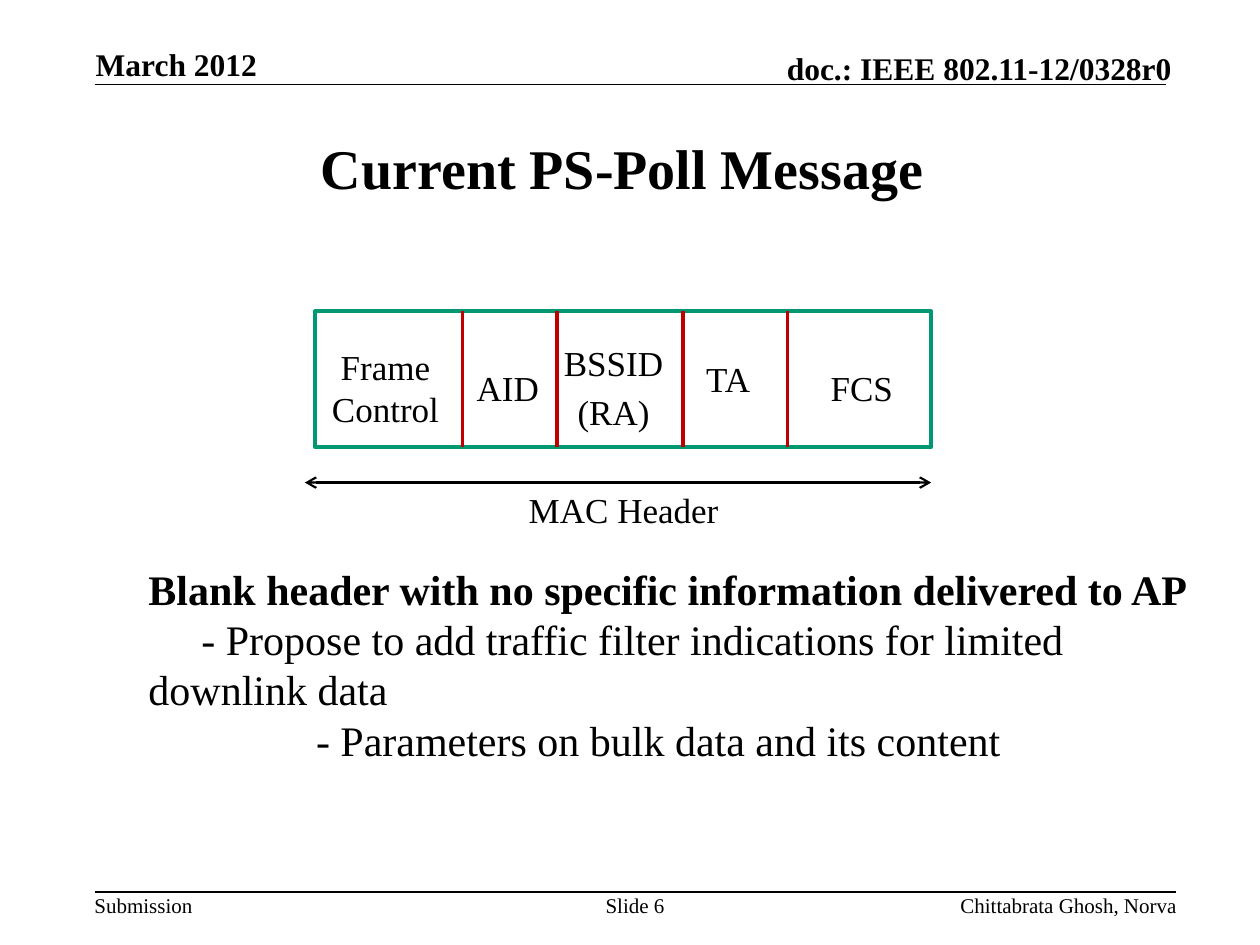
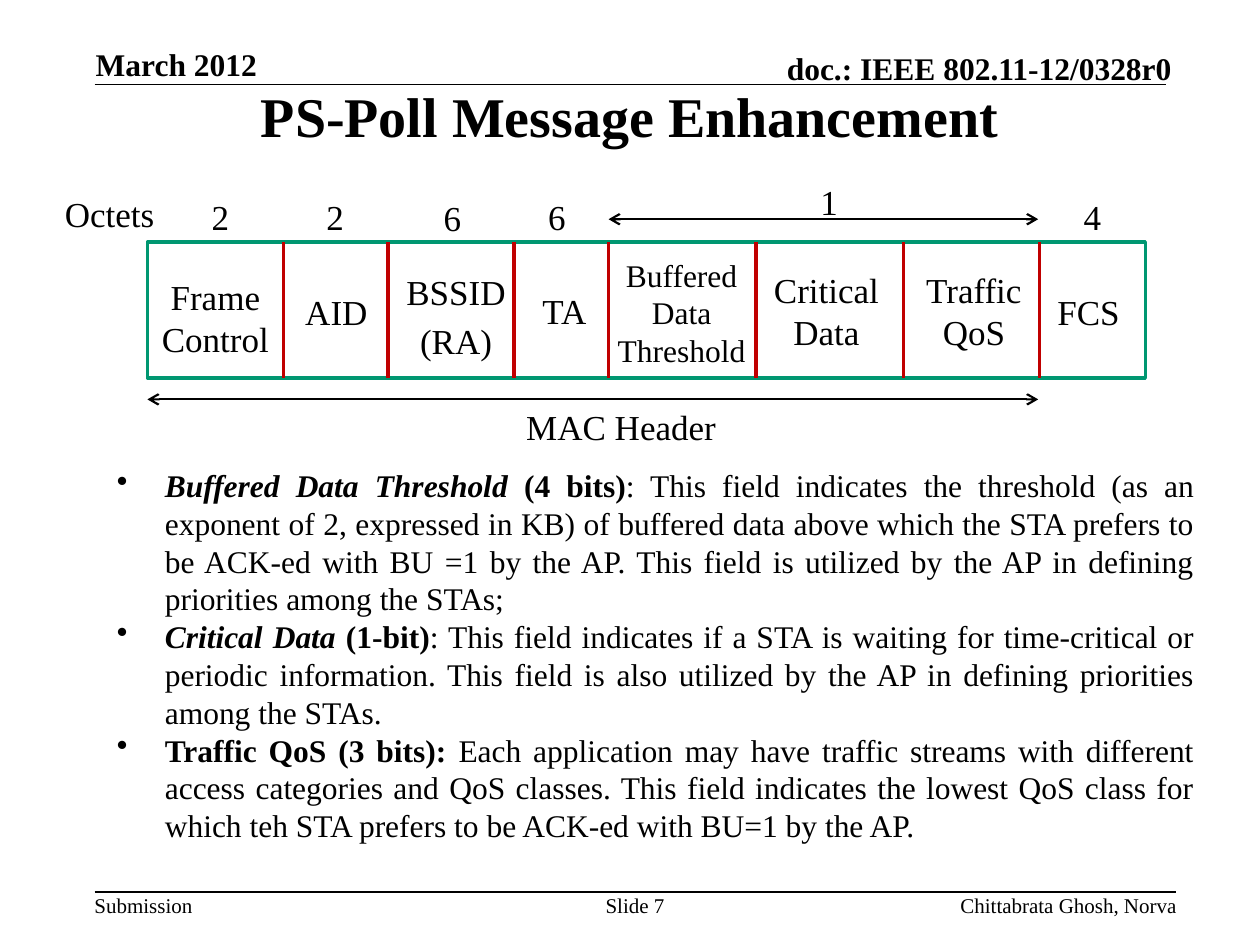
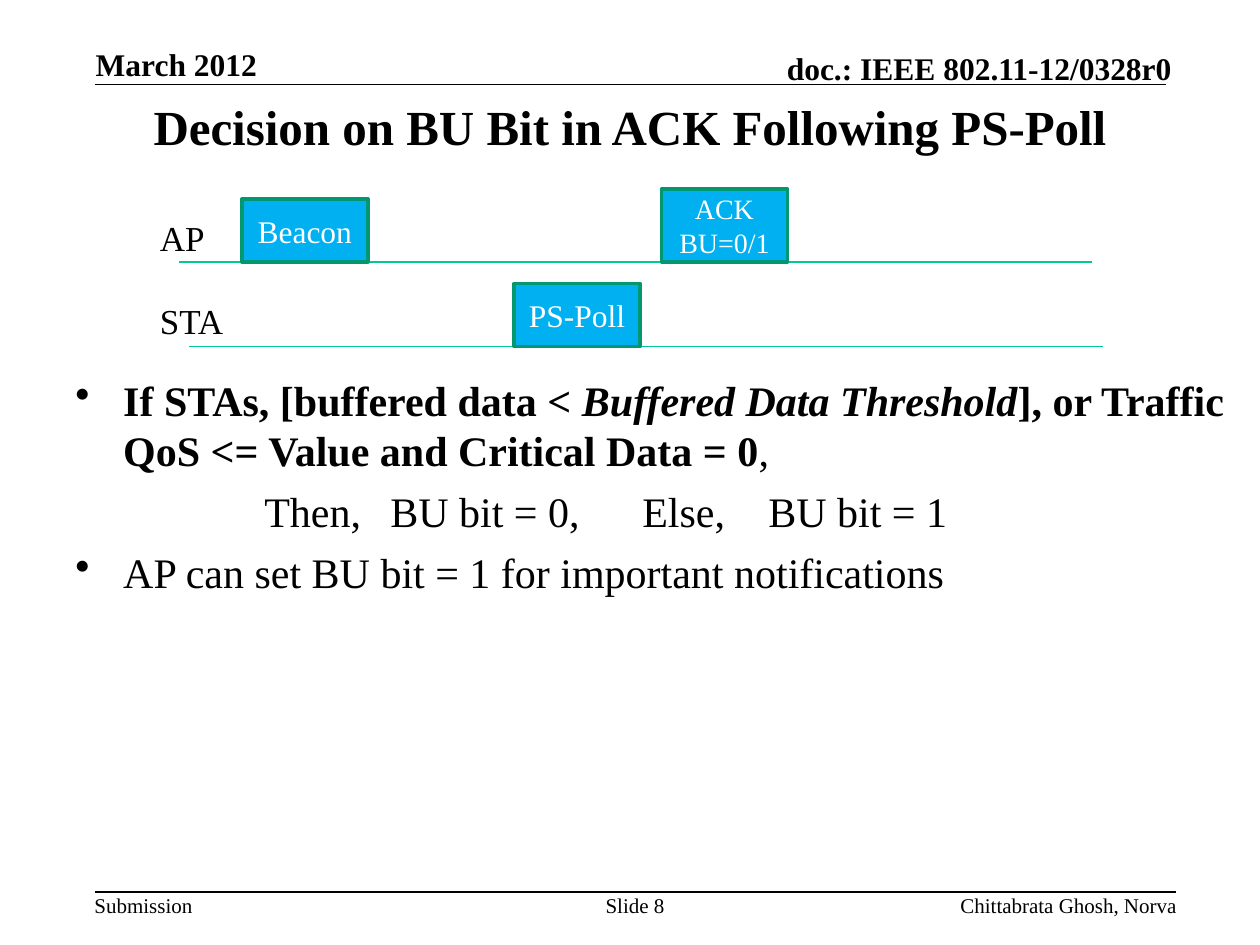
import pptx
import pptx.dml.color
import pptx.enum.shapes
import pptx.enum.text
import pptx.oxml
import pptx.oxml.ns
import pptx.util
from pptx.util import Inches

FONT = "Times New Roman"
COLORS = {
    "ink": "000000",
    "paper": "FFFFFF",
    "frame": "009771",
    "divider": "C00000",
    "timeline": "00C896",
    "message": "00B0F0",
}
RGB = {name: pptx.dml.color.RGBColor.from_string(code) for name, code in COLORS.items()}
LEFT, CENTER, RIGHT, JUSTIFY = (
    pptx.enum.text.PP_ALIGN.LEFT,
    pptx.enum.text.PP_ALIGN.CENTER,
    pptx.enum.text.PP_ALIGN.RIGHT,
    pptx.enum.text.PP_ALIGN.JUSTIFY,
)
TOP, MIDDLE, BOTTOM = (
    pptx.enum.text.MSO_ANCHOR.TOP,
    pptx.enum.text.MSO_ANCHOR.MIDDLE,
    pptx.enum.text.MSO_ANCHOR.BOTTOM,
)
RECTANGLE = pptx.enum.shapes.MSO_SHAPE.RECTANGLE


def write(shape, paragraphs, size, bold=False, align=LEFT, anchor=TOP, color="ink",
          inset=(0.1, 0.05), space=0):
    """Fill a shape with paragraphs.

    Each is a string or a dict with spans [(text, style letters b and i)] and
    optionally bullet, indent (first line, inches) and tabs (inches).
    """
    frame = shape.text_frame
    frame.word_wrap = True
    frame.vertical_anchor = anchor
    frame.margin_left = frame.margin_right = Inches(inset[0])
    frame.margin_top = frame.margin_bottom = Inches(inset[1])
    for index, item in enumerate(paragraphs):
        if isinstance(item, str):
            item = {"spans": [(item, "b" if bold else "")]}
        para = frame.paragraphs[0] if index == 0 else frame.add_paragraph()
        para.alignment = align
        if index and space:
            para.space_before = pptx.util.Pt(space)
        properties = para._p.get_or_add_pPr()
        if item.get("bullet"):
            properties.set("marL", str(Inches(0.38)))
            properties.set("indent", str(Inches(-0.38)))
            bullet = pptx.oxml.parse_xml(
                f'<a:buChar {pptx.oxml.ns.nsdecls("a")} char="•"/>')
            properties.append(bullet)
        elif "indent" in item:
            properties.set("marL", "0")
            properties.set("indent", str(Inches(item["indent"])))
        if "tabs" in item:
            stops = "".join(f'<a:tab pos="{Inches(stop)}" algn="l"/>' for stop in item["tabs"])
            properties.append(pptx.oxml.parse_xml(
                f'<a:tabLst {pptx.oxml.ns.nsdecls("a")}>{stops}</a:tabLst>'))
        para.font.name = FONT
        para.font.size = pptx.util.Pt(size)
        para.font.color.rgb = RGB[color]
        styles = {style for _, style in item["spans"]}
        if len(styles) == 1:
            para.font.bold = "b" in item["spans"][0][1]
        for text, style in item["spans"]:
            span = para.add_run()
            span.text = text
            if len(styles) > 1:
                span.font.bold = "b" in style
                span.font.italic = "i" in style


def draw_line(page, left, top, right, bottom, color, width, arrows=False):
    line = page.shapes.add_connector(
        pptx.enum.shapes.MSO_CONNECTOR.STRAIGHT,
        Inches(left), Inches(top), Inches(right), Inches(bottom))
    line.line.color.rgb = RGB[color]
    line.line.width = pptx.util.Pt(width)
    properties = line._element.spPr
    if arrows:
        for end in ("headEnd", "tailEnd"):
            properties.get_or_add_ln().append(pptx.oxml.parse_xml(
                f'<a:{end} {pptx.oxml.ns.nsdecls("a")} type="arrow"/>'))
    properties.append(pptx.oxml.parse_xml(f'<a:effectLst {pptx.oxml.ns.nsdecls("a")}/>'))


deck = pptx.Presentation()
deck.slide_width = Inches(10)
deck.slide_height = Inches(7.5)

# Title, left, top, size
titles = [
    ("Current PS-Poll Message", 0.69, 0.75, 32),
    ("PS-Poll Message Enhancement", 0.75, 0.33, 32),
    ("Decision on BU Bit in ACK Following PS-Poll", 0.75, 0.42, 28),
]
pages = []
for number, (title, left, top, size) in enumerate(titles, start=6):
    page = deck.slides.add_slide(deck.slide_layouts[6])
    pages.append(page)
    for rule_top, rule_right in ((0.67, 9.25), (7.08, 9.33)):
        draw_line(page, 0.75, rule_top, rule_right, rule_top, "ink", 1)
    bands = [
        ("March 2012", 0.76, 0.36, 2.05, 0.3, 18, LEFT, BOTTOM),
        ("doc.: IEEE 802.11-12/0328r0", 5.47, 0.39, 3.83, 0.3, 18, RIGHT, BOTTOM),
        ("Submission", 0.75, 7.08, 0.9, 0.2, 12, LEFT, TOP),
        (f"Slide {number}", 4.75, 7.08, 0.58, 0.2, 12, CENTER, TOP),
        ("Chittabrata Ghosh, Norva", 5.86, 7.08, 3.48, 0.2, 12, RIGHT, TOP),
    ]
    for text, x, y, width, height, band_size, align, anchor in bands:
        box = page.shapes.add_textbox(Inches(x), Inches(y), Inches(width), Inches(height))
        write(box, [text], band_size, bold=band_size == 18, align=align, anchor=anchor,
              inset=(0, 0))
    box = page.shapes.add_textbox(Inches(left), Inches(top), Inches(8.5), Inches(1.16))
    write(box, [title], size, bold=True, align=CENTER, anchor=MIDDLE)

current, enhanced, decision = pages

# Message frames: edges of the fields, then labels as (lines, centre, top, size, space)
message_frames = [
    (current, 2.47, [2.5, 3.67, 4.42, 5.42, 6.25, 7.39], [
        (["Frame", "Control"], 3.06, 2.69, 20, 0),
        (["AID"], 4.03, 2.86, 20, 0),
        (["BSSID", "(RA)"], 4.87, 2.66, 20, 4),
        (["TA"], 5.78, 2.79, 20, 0),
        (["FCS"], 6.84, 2.86, 20, 0),
        (["MAC Header"], 4.95, 3.83, 20, 0),
    ]),
    (enhanced, 1.92, [1.17, 2.25, 3.08, 4.08, 4.83, 6, 7.17, 8.25, 9.09], [
        (["Frame", "Control"], 1.71, 2.14, 20, 0),
        (["AID"], 2.67, 2.26, 20, 0),
        (["BSSID", "(RA)"], 3.62, 2.1, 20, 4),
        (["TA"], 4.48, 2.25, 20, 0),
        (["Buffered", "Data", "Threshold"], 5.41, 1.98, 18, 0),
        (["Critical", "Data"], 6.56, 2.08, 20, 0),
        (["Traffic", "QoS"], 7.73, 2.08, 20, 0),
        (["FCS"], 8.64, 2.26, 20, 0),
        (["Octets"], 0.87, 1.48, 20, 0),
        (["2"], 1.75, 1.5, 20, 0),
        (["2"], 2.66, 1.5, 20, 0),
        (["6"], 3.59, 1.51, 20, 0),
        (["6"], 4.42, 1.5, 20, 0),
        (["1"], 6.58, 1.38, 20, 0),
        (["4"], 8.67, 1.5, 20, 0),
        (["MAC Header"], 4.93, 3.17, 20, 0),
    ]),
]
FRAME_HEIGHT = 1.08
LABEL_WIDTH = 1.8
for page, top, edges, labels in message_frames:
    outline = page.shapes.add_shape(
        RECTANGLE, Inches(edges[0]), Inches(top),
        Inches(edges[-1] - edges[0]), Inches(FRAME_HEIGHT))
    outline.shadow.inherit = False
    outline.fill.solid()
    outline.fill.fore_color.rgb = RGB["paper"]
    outline.line.color.rgb = RGB["frame"]
    outline.line.width = pptx.util.Pt(2)
    for edge in edges[1:-1]:
        draw_line(page, edge, top, edge, top + FRAME_HEIGHT, "divider", 2)
    for lines, center, label_top, size, space in labels:
        box = page.shapes.add_textbox(
            Inches(center - LABEL_WIDTH / 2), Inches(label_top),
            Inches(LABEL_WIDTH), Inches(0.1 + 0.33 * len(lines)))
        write(box, lines, size, align=CENTER, space=space)

for page, left, right, height in (
    (current, 2.42, 7.39, 3.83),
    (enhanced, 4.83, 8.24, 1.74),
    (enhanced, 1.17, 8.24, 3.17),
):
    draw_line(page, left, height, right, height, "ink", 1.25, arrows=True)

# Timelines of the access point and the station
for name, name_top, left, top in (("AP", 1.67, 1.42, 2.08), ("STA", 2.33, 1.5, 2.75)):
    draw_line(decision, left, top, left + 7.25, top, "timeline", 0.75)
    box = decision.shapes.add_textbox(Inches(1.17), Inches(name_top), Inches(1), Inches(0.44))
    write(box, [name], 20)

for lines, left, top, height, size in (
    (["Beacon"], 1.92, 1.58, 0.5, 18),
    (["PS-Poll"], 4.08, 2.25, 0.5, 18),
    (["ACK", "BU=0/1"], 5.25, 1.5, 0.58, 16),
):
    message = decision.shapes.add_shape(
        RECTANGLE, Inches(left), Inches(top), Inches(1), Inches(height))
    message.shadow.inherit = False
    message.fill.solid()
    message.fill.fore_color.rgb = RGB["message"]
    message.line.color.rgb = RGB["frame"]
    message.line.width = pptx.util.Pt(2)
    write(message, lines, size, align=CENTER, anchor=MIDDLE, color="paper")

# Body texts
body = current.shapes.add_textbox(Inches(1.08), Inches(4.42), Inches(8.75), Inches(2.12))
write(body, [
    {"spans": [("Blank header with no specific information delivered to AP", "b")]},
    {"indent": 0.42, "spans": [
        ("- Propose to add traffic filter indications for limited downlink data", "")]},
    {"indent": 1.33, "spans": [("- Parameters on bulk data and its content", "")]},
], 24)

body = enhanced.shapes.add_textbox(Inches(0.83), Inches(3.65), Inches(8.75), Inches(3.43))
write(body, [
    {"bullet": True, "spans": [
        ("Buffered Data Threshold ", "bi"),
        ("(4 bits)", "b"),
        (": This field indicates the threshold (as an exponent of 2, expressed in KB) of "
         "buffered data above which the STA prefers to be ACK-ed with BU =1 by the AP. This "
         "field is utilized by the AP in defining priorities among the STAs;", "")]},
    {"bullet": True, "spans": [
        ("Critical Data ", "bi"),
        ("(1-bit)", "b"),
        (": This field indicates if a STA is waiting for time-critical or periodic "
         "information. This field is also utilized by the AP in defining priorities among "
         "the STAs.", "")]},
    {"bullet": True, "spans": [
        ("Traffic QoS (3 bits): ", "b"),
        ("Each application may have traffic streams with different access categories and QoS "
         "classes. This field indicates the lowest QoS class for which teh STA prefers to be "
         "ACK-ed with BU=1 by the AP.", "")]},
], 18, align=JUSTIFY)

body = decision.shapes.add_textbox(Inches(0.5), Inches(2.92), Inches(9.5), Inches(3.75))
write(body, [
    {"bullet": True, "spans": [
        ("If STAs, [buffered data < ", "b"),
        ("Buffered Data Threshold", "bi"),
        ("], or Traffic QoS <= Value and Critical Data = 0", "b"),
        (",", "")]},
    {"indent": 1.5, "tabs": [2.59, 5.6, 6.67], "spans": [
        ("Then,\tBU bit = 0,\tElse,\tBU bit = 1", "")]},
    {"bullet": True, "spans": [("AP can set BU bit = 1 for important notifications", "")]},
], 24, space=6)

deck.save("out.pptx")
